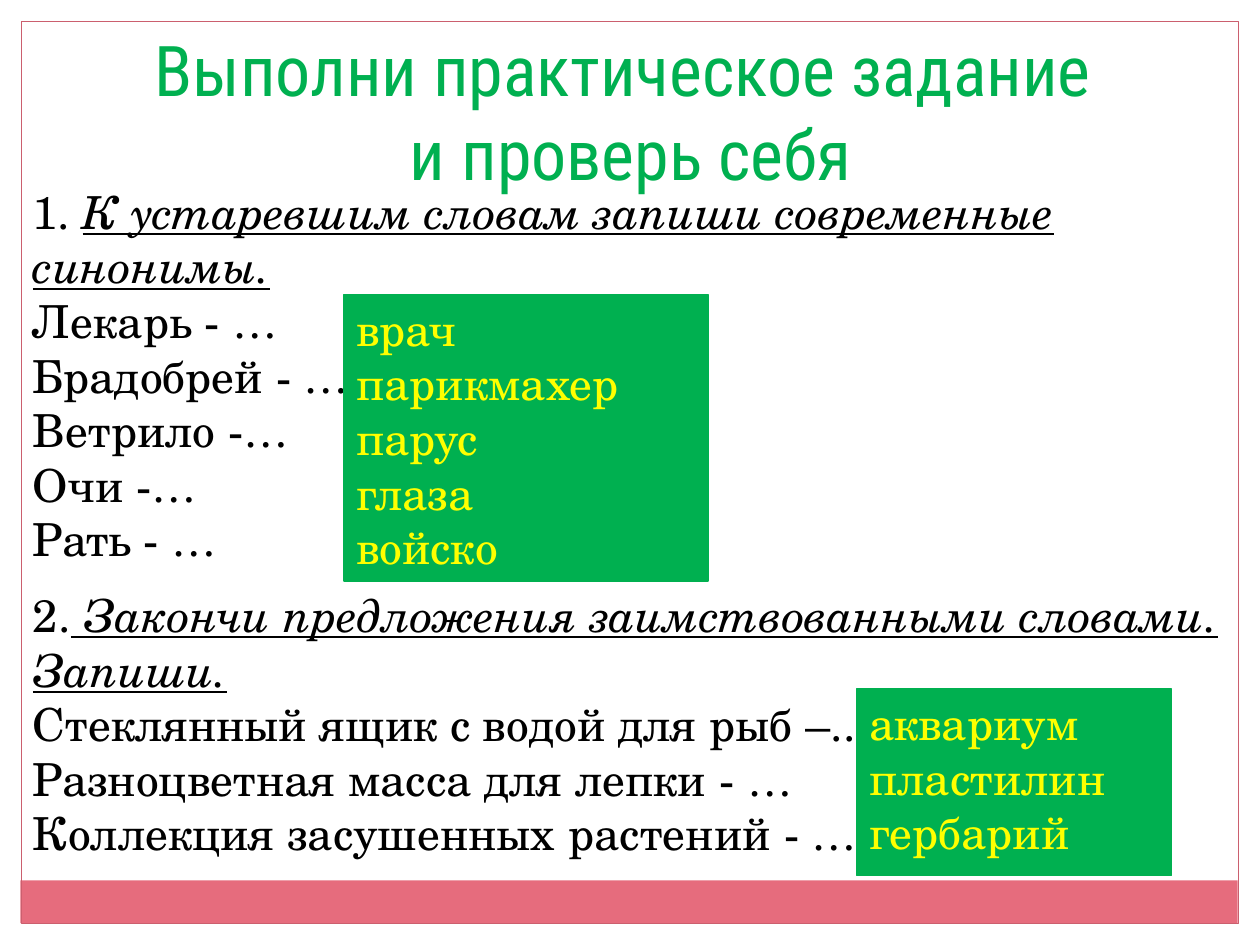
"""Build a vocabulary exercise slide with two tasks and their answer panels."""
import dataclasses

import pptx
import pptx.dml.color
import pptx.enum.shapes
import pptx.enum.text
import pptx.oxml.ns
import pptx.util
from lxml import etree

Cm = pptx.util.Cm
Pt = pptx.util.Pt
RGB = pptx.dml.color.RGBColor.from_string
RECTANGLE = pptx.enum.shapes.MSO_SHAPE.RECTANGLE
ALIGN = pptx.enum.text.PP_ALIGN
ANCHOR = pptx.enum.text.MSO_ANCHOR


@dataclasses.dataclass(frozen=True)
class Theme:
    green: str = "00B050"
    yellow: str = "FFFF00"
    black: str = "000000"
    pink: str = "E66C7D"
    rose: str = "CB5F6E"
    title_font: str = "Roboto Condensed"
    body_font: str = "TeX Gyre Schola"
    title_size: int = 40
    body_size: int = 26


theme = Theme()


def style_paragraph(paragraph, font_name, size, color, align=ALIGN.LEFT):
    properties = paragraph._p.get_or_add_pPr()
    properties.set("marL", "0")
    properties.set("indent", "0")
    etree.SubElement(properties, pptx.oxml.ns.qn("a:buNone"))
    paragraph.alignment = align
    paragraph.space_before = Pt(0)
    paragraph.font.name = font_name
    paragraph.font.size = Pt(size)
    paragraph.font.color.rgb = RGB(color)


def add_rectangle(slide, box, fill, line, line_width):
    rectangle = slide.shapes.add_shape(RECTANGLE, *map(Cm, box))
    rectangle.shadow.inherit = False
    if fill:
        rectangle.fill.solid()
        rectangle.fill.fore_color.rgb = RGB(fill)
    else:
        rectangle.fill.background()
    if line:
        rectangle.line.color.rgb = RGB(line)
        rectangle.line.width = Pt(line_width)
    else:
        rectangle.line.fill.background()
    return rectangle


presentation = pptx.Presentation()
presentation.slide_width = Cm(25.4)
presentation.slide_height = Cm(19.05)
slide = presentation.slides.add_slide(presentation.slide_layouts[3])
heading, first_task, second_task = list(slide.placeholders)[:3]
for spare in list(slide.placeholders)[3:]:
    spare._element.getparent().remove(spare._element)

add_rectangle(slide, (0.41, 17.75, 24.54, 0.86), theme.pink, None, 0)
add_rectangle(slide, (0.43, 0.43, 24.54, 18.19), None, theme.rose, 0.75)

heading.left, heading.top, heading.width, heading.height = map(Cm, (0.41, 0.41, 24.61, 3.68))
heading.text_frame.auto_size = pptx.enum.text.MSO_AUTO_SIZE.NONE
heading.text_frame.vertical_anchor = ANCHOR.TOP
heading.text_frame.text = "Выполни практическое задание \nи проверь себя"
for paragraph in heading.text_frame.paragraphs:
    style_paragraph(paragraph, theme.title_font, theme.title_size, theme.green, ALIGN.CENTER)

tasks = [
    (first_task, (0.41, 3.58, 24.99, 8.03),
     "1. ", "К устаревшим словам запиши современные синонимы.",
     ["Лекарь - …", "Брадобрей - …", "Ветрило -…", "Очи -…", "Рать - …"],
     (6.93, 5.94, 7.34, 5.77),
     ["врач", "парикмахер", "парус", "глаза", "войско"]),
    (second_task, (0.41, 11.71, 24.99, 5.82),
     "2.", " Закончи предложения заимствованными словами. Запиши.",
     ["Стеклянный ящик с водой для рыб –...", "Разноцветная масса для лепки - …",
      "Коллекция засушенных растений - …"],
     (17.27, 13.89, 6.35, 3.76),
     ["аквариум", "пластилин", "гербарий"]),
]

for task, task_box, number, instruction, questions, answer_box, answers in tasks:
    task.left, task.top, task.width, task.height = map(Cm, task_box)
    task.text_frame.auto_size = pptx.enum.text.MSO_AUTO_SIZE.NONE
    task.text_frame.text = "\n".join([number, *questions])
    instruction_run = task.text_frame.paragraphs[0].add_run()
    instruction_run.text = instruction
    instruction_run.font.italic = True
    instruction_run.font.underline = True

    answer_panel = add_rectangle(slide, answer_box, theme.green, theme.green, 0.9)
    answer_panel.text_frame.vertical_anchor = ANCHOR.TOP
    answer_panel.text_frame.word_wrap = True
    answer_panel.text_frame.text = "\n".join(answers)

    for part, color in ((task, theme.black), (answer_panel, theme.yellow)):
        for paragraph in part.text_frame.paragraphs:
            style_paragraph(paragraph, theme.body_font, theme.body_size, color)

presentation.save("out.pptx")
